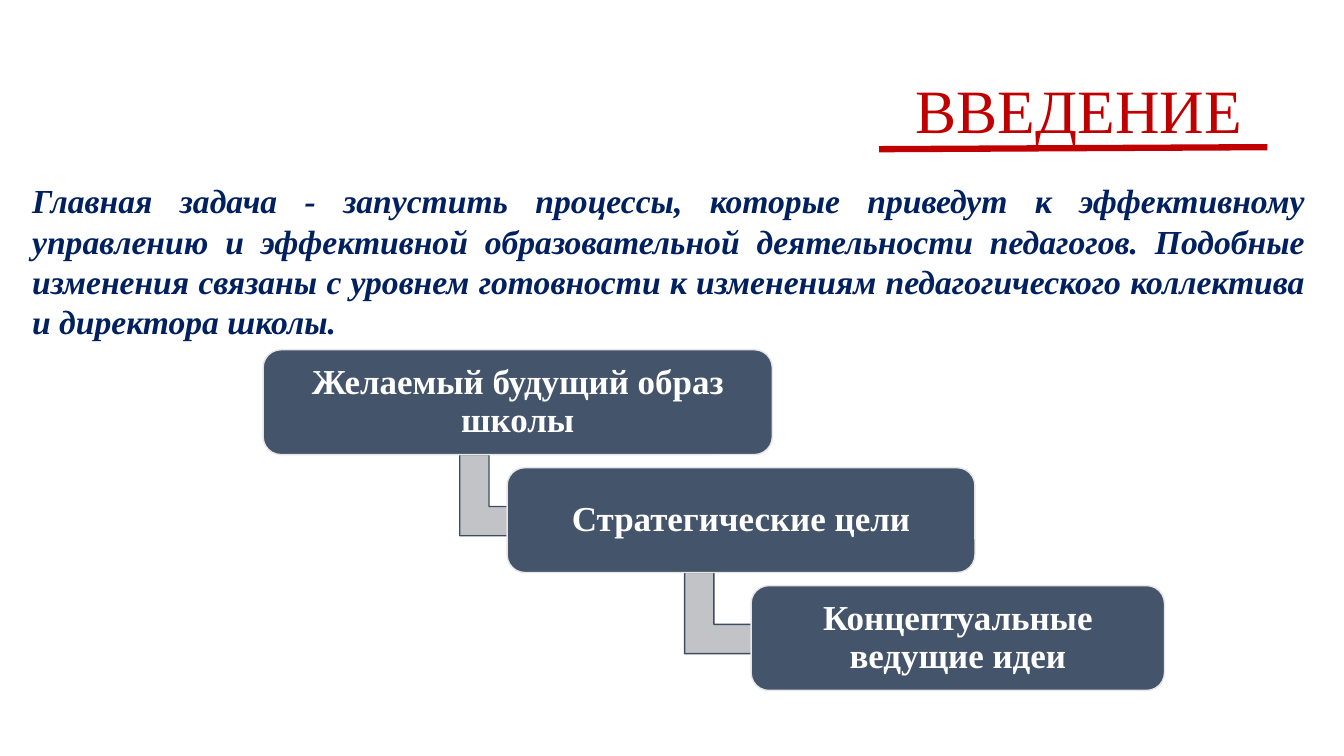
from dataclasses import dataclass

from lxml.etree import SubElement
from pptx import Presentation
from pptx.dml.color import RGBColor
from pptx.enum.shapes import MSO_CONNECTOR as Connector, MSO_SHAPE as Shape
from pptx.enum.text import MSO_ANCHOR as Anchor, MSO_AUTO_SIZE as AutoSize, PP_ALIGN as Align
from pptx.oxml.ns import qn
from pptx.util import Inches, Pt


@dataclass(frozen=True)
class Theme:
    """Colours, font and type sizes of the slide."""
    font: str = "Times New Roman"
    red: str = "C00000"
    navy: str = "002060"
    white: str = "FFFFFF"
    slate: str = "44546A"
    box_line: str = "E7E6E6"
    arrow_fill: str = "C1C3C7"
    arrow_line: str = "3E4C60"
    title_size: float = 44
    body_size: float = 24
    step_size: float = 25


class SlideBuilder:
    """Draws themed elements on the current page."""

    def __init__(self, page, theme):
        self.page = page
        self.theme = theme

    def label(self, shape, text, size, color, align, anchor, spacing=1.0, bold=False, italic=False):
        """Put one formatted paragraph into a shape."""
        frame = shape.text_frame
        frame.word_wrap = True
        frame.vertical_anchor = anchor
        frame.text = text
        para = frame.paragraphs[0]
        para.alignment = align
        para.line_spacing = spacing
        font = para.runs[0].font
        font.name, font.size = self.theme.font, Pt(size)
        font.bold, font.italic = bold, italic
        font.color.rgb = RGBColor.from_string(color)

    def text(self, area, text, size, color, align, anchor, **style):
        """Add a text box and return it."""
        box = self.page.shapes.add_textbox(*map(Inches, area))
        self.label(box, text, size, color, align, anchor, **style)
        return box

    def rule(self, start, end, color, width):
        """Add a straight line without a shadow."""
        line = self.page.shapes.add_connector(Connector.STRAIGHT, *map(Inches, start + end))
        line.line.color.rgb = RGBColor.from_string(color)
        line.line.width = Pt(width)
        SubElement(line._element.spPr, qn("a:effectLst"))

    def shape(self, kind, area, fill, outline, adjustments):
        """Add a filled, outlined preset shape and return it."""
        shape = self.page.shapes.add_shape(kind, *map(Inches, area))
        shape.shadow.inherit = False
        shape.fill.solid()
        shape.fill.fore_color.rgb = RGBColor.from_string(fill)
        shape.line.color.rgb = RGBColor.from_string(outline)
        shape.line.width = Pt(1)
        for index, value in enumerate(adjustments):
            shape.adjustments[index] = value
        return shape

    def arrow(self, left, top):
        """Add a bent arrow leading down to the next step."""
        theme = self.theme
        arrow = self.shape(Shape.BENT_UP_ARROW, (left, top, 0.88, 1), theme.arrow_fill,
                           theme.arrow_line, (0.33, 0.25, 0.36))
        arrow.rotation = 90

    def step(self, left, top, width, text):
        """Add a rounded step box with its label."""
        theme = self.theme
        box = self.shape(Shape.ROUNDED_RECTANGLE, (left, top, width, 1.04), theme.slate,
                         theme.box_line, (0.17,))
        frame = box.text_frame
        frame.margin_left = frame.margin_right = Inches(0.15)
        self.label(box, text, theme.step_size, theme.white, Align.CENTER, Anchor.MIDDLE,
                   spacing=0.9, bold=True)


def main():
    """Build and save the introduction slide."""
    deck = Presentation()
    deck.slide_width, deck.slide_height = Inches(13.33), Inches(7.5)
    theme = Theme()
    builder = SlideBuilder(deck.slides.add_slide(deck.slide_layouts[6]), theme)

    builder.text((0.92, 0.4, 11.5, 1.45), "ВВЕДЕНИЕ", theme.title_size, theme.red,
                 Align.RIGHT, Anchor.MIDDLE, spacing=0.9)
    builder.rule((8.72, 1.48), (12.57, 1.46), theme.red, 4.5)
    task = builder.text(
        (0.22, 1.74, 12.82, 1.72),
        "Главная задача - запустить процессы, которые приведут к эффективному управлению "
        "и эффективной образовательной деятельности педагогов. Подобные изменения связаны "
        "с уровнем готовности к изменениям педагогического коллектива и директора школы.",
        theme.body_size, theme.navy, Align.JUSTIFY, Anchor.TOP, bold=True, italic=True)
    task.text_frame.auto_size = AutoSize.SHAPE_TO_FIT_TEXT

    steps = [
        (2.61, 5.05, "Желаемый будущий образ школы", 4.62),
        (5.03, 4.64, "Стратегические цели", 6.85),
        (7.45, 4.1, "Концептуальные ведущие идеи", None),
    ]
    first_top, pitch, arrow_drop = 3.47, 1.17, 0.98
    for index, (left, width, label, arrow_left) in enumerate(steps):
        top = first_top + index * pitch
        if arrow_left is not None:
            builder.arrow(arrow_left, top + arrow_drop)
        builder.step(left, top, width, label)

    deck.save("out.pptx")


if __name__ == "__main__":
    main()
